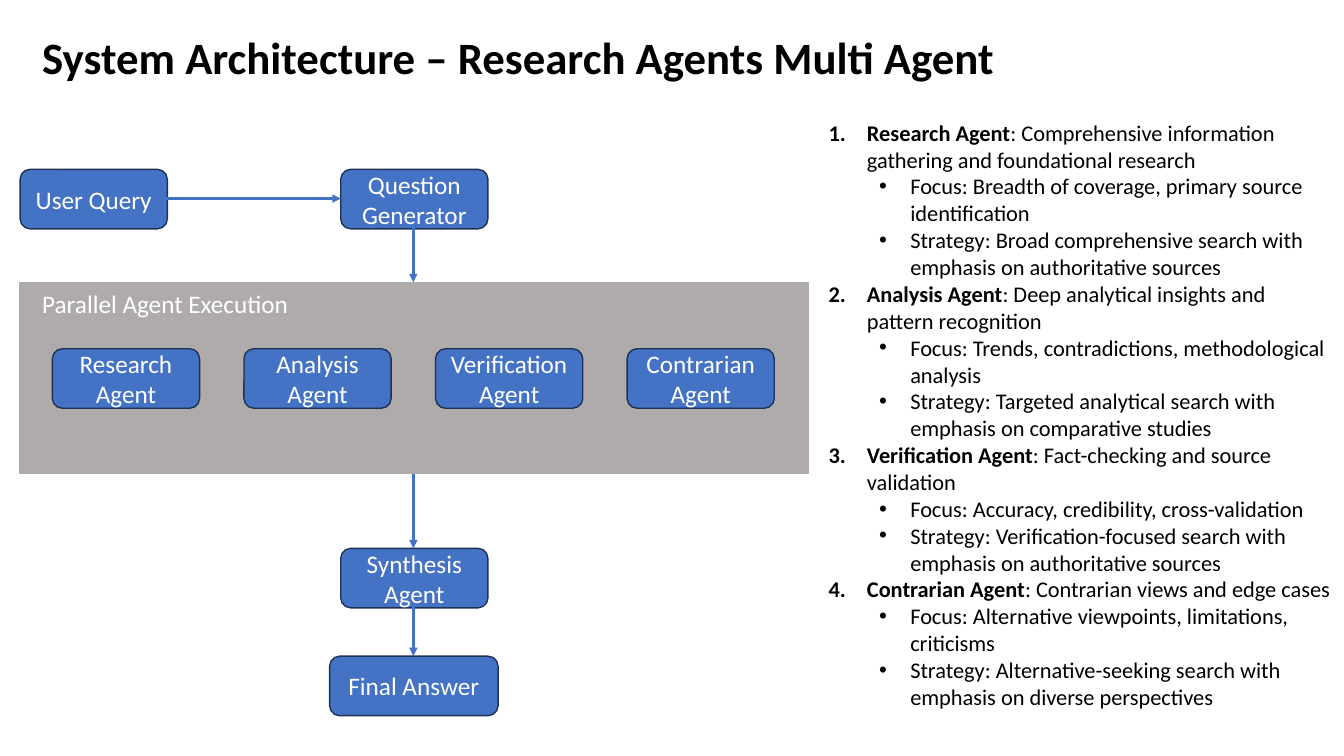
from lxml import etree
from pptx import Presentation
from pptx import util as u
from pptx.dml.color import RGBColor
from pptx.enum import shapes, text
from pptx.oxml import ns

BLUE, NAVY, GREY, WHITE, BLACK = "4472C4", "1E3256", "AFABAB", "FFFFFF", "000000"

AGENTS = [
    ("Research Agent", "Comprehensive information gathering and foundational research",
     "Breadth of coverage, primary source identification",
     "Broad comprehensive search with emphasis on authoritative sources"),
    ("Analysis Agent", "Deep analytical insights and pattern recognition",
     "Trends, contradictions, methodological analysis",
     "Targeted analytical search with emphasis on comparative studies"),
    ("Verification Agent", "Fact-checking and source validation",
     "Accuracy, credibility, cross-validation",
     "Verification-focused search with emphasis on authoritative sources"),
    ("Contrarian Agent", "Contrarian views and edge cases",
     "Alternative viewpoints, limitations, criticisms",
     "Alternative-seeking search with emphasis on diverse perspectives"),
]


def rgb(value):
    return RGBColor.from_string(value)


def add_xml(parent, tag, **attrs):
    return etree.SubElement(parent, ns.qn(tag), attrs)


class Deck:
    font = "Calibri"

    def __init__(self, width, height):
        self.prs = Presentation()
        self.prs.slide_width = u.Inches(width)
        self.prs.slide_height = u.Inches(height)
        self.s = self.prs.slides.add_slide(self.prs.slide_layouts[6])

    def run(self, p, words, size, color, bold=False):
        r = p.add_run()
        r.text = words
        style = {"name": self.font, "size": u.Pt(size), "bold": bold}
        for key, value in style.items():
            setattr(r.font, key, value)
        r.font.color.rgb = rgb(color)

    def text_box(self, x, y, w, h, wrap=True, anchor=text.MSO_ANCHOR.TOP):
        tf = self.s.shapes.add_textbox(*map(u.Inches, (x, y, w, h))).text_frame
        for key, value in {"word_wrap": wrap, "vertical_anchor": anchor}.items():
            setattr(tf, key, value)
        return tf

    def shape(self, kind, x, y, w, h, fill, line):
        sp = self.s.shapes.add_shape(kind, *map(u.Inches, (x, y, w, h)))
        sp.shadow.inherit = False
        sp.fill.solid()
        sp.fill.fore_color.rgb = rgb(fill)
        sp.line.color.rgb = rgb(line)
        sp.line.width = u.Pt(1)
        return sp

    def step(self, label, x, y, w=1.46, h=0.59):
        """Add a rounded box holding one step of the flow."""
        sp = self.shape(shapes.MSO_SHAPE.ROUNDED_RECTANGLE, x, y, w, h, BLUE, NAVY)
        tf = sp.text_frame
        tf.word_wrap = True
        tf.vertical_anchor = text.MSO_ANCHOR.MIDDLE
        p = tf.paragraphs[0]
        p.alignment = text.PP_ALIGN.CENTER
        self.run(p, label, 18, WHITE)

    def arrow(self, x1, y1, x2, y2):
        sp = self.s.shapes.add_connector(
            shapes.MSO_CONNECTOR.STRAIGHT, *map(u.Inches, (x1, y1, x2, y2)))
        sp.line.color.rgb = rgb(BLUE)
        sp.line.width = u.Pt(2)
        add_xml(sp.line._get_or_add_ln(), "a:tailEnd", type="triangle")
        add_xml(sp._element.spPr, "a:effectLst")

    def list_item(self, tf, level, margin, hang, parts):
        """Add a numbered (level 0) or bulleted paragraph of (words, bold) parts."""
        first = tf.paragraphs[0]
        p = tf.add_paragraph() if first.runs else first
        p.level = level
        pPr = p._p.get_or_add_pPr()
        pPr.set("marL", str(u.Inches(margin)))
        pPr.set("indent", str(-u.Inches(hang)))
        if level:
            add_xml(pPr, "a:buFont", typeface="Arial")
            add_xml(pPr, "a:buChar", char="•")
        else:
            add_xml(pPr, "a:buFont", typeface="+mj-lt")
            add_xml(pPr, "a:buAutoNum", type="arabicPeriod")
        for words, bold in parts:
            self.run(p, words, 16, BLACK, bold)


def main():
    d = Deck(13.33, 7.5)

    tf = d.text_box(0.32, -0.13, 11.5, 1.45, anchor=text.MSO_ANCHOR.MIDDLE)
    tf.paragraphs[0].line_spacing = 0.9
    d.run(tf.paragraphs[0], "System Architecture – Research Agents Multi Agent", 32, BLACK, True)

    d.step("User Query", 0.2, 1.68)
    d.step("Question Generator", 3.38, 1.68)
    d.step("Synthesis Agent", 3.38, 5.44)
    d.step("Final Answer", 3.27, 6.51, w=1.67)

    d.shape(shapes.MSO_SHAPE.RECTANGLE, 0.2, 2.8, 7.82, 1.9, GREY, GREY)
    for i, (name, *_) in enumerate(AGENTS):
        d.step(name, 0.52 + 1.9 * i, 3.46)
    tf = d.text_box(0.32, 2.81, 2.67, 0.4, wrap=False)
    d.run(tf.paragraphs[0], "Parallel Agent Execution", 18, WHITE)

    for top, bottom in ((2.26, 2.8), (4.7, 5.44), (6.02, 6.51)):
        d.arrow(4.1, top, 4.1, bottom)
    d.arrow(1.65, 1.97, 3.38, 1.97)

    tf = d.text_box(8.12, 1.13, 5.21, 6.1)
    for name, summary, focus, strategy in AGENTS:
        d.list_item(tf, 0, 0.38, 0.38, [(name, True), (f": {summary}", False)])
        for label, detail in (("Focus", focus), ("Strategy", strategy)):
            d.list_item(tf, 1, 0.81, 0.31, [(f"{label}: {detail}", False)])

    d.prs.save("out.pptx")


if __name__ == "__main__":
    main()
